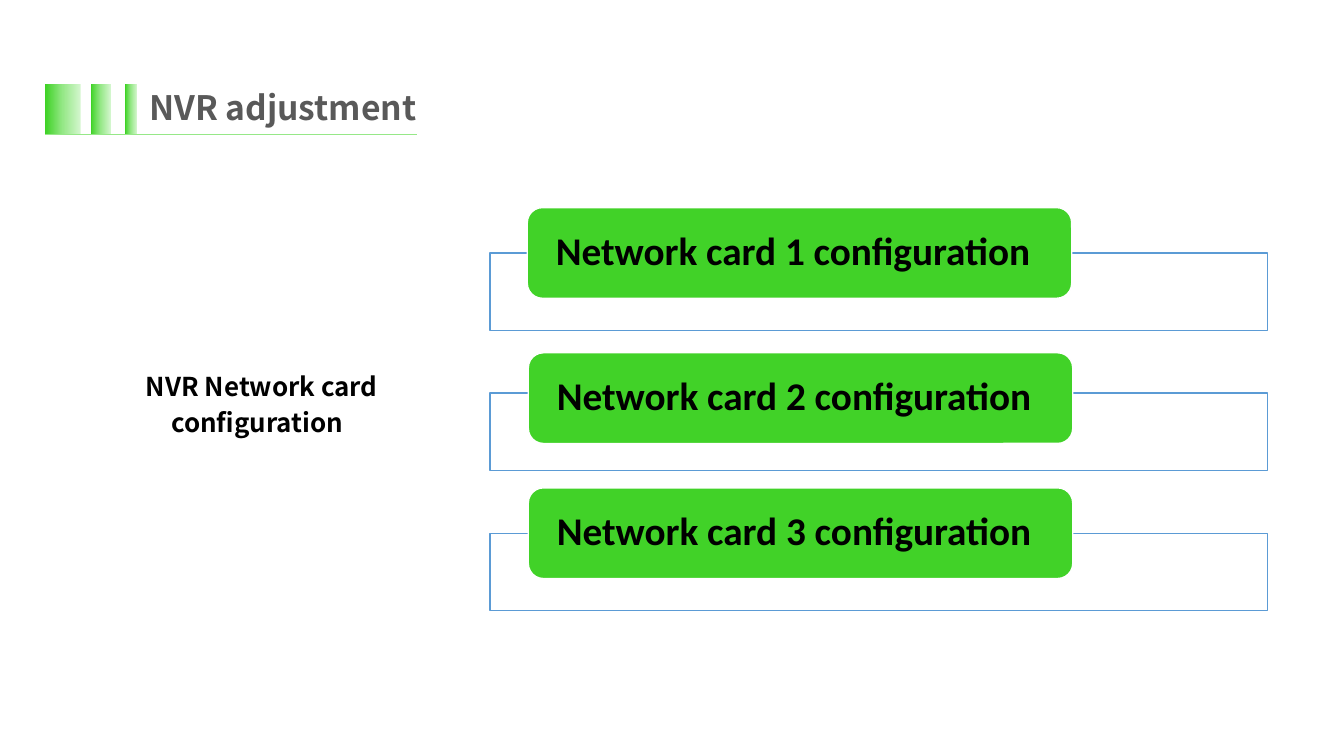
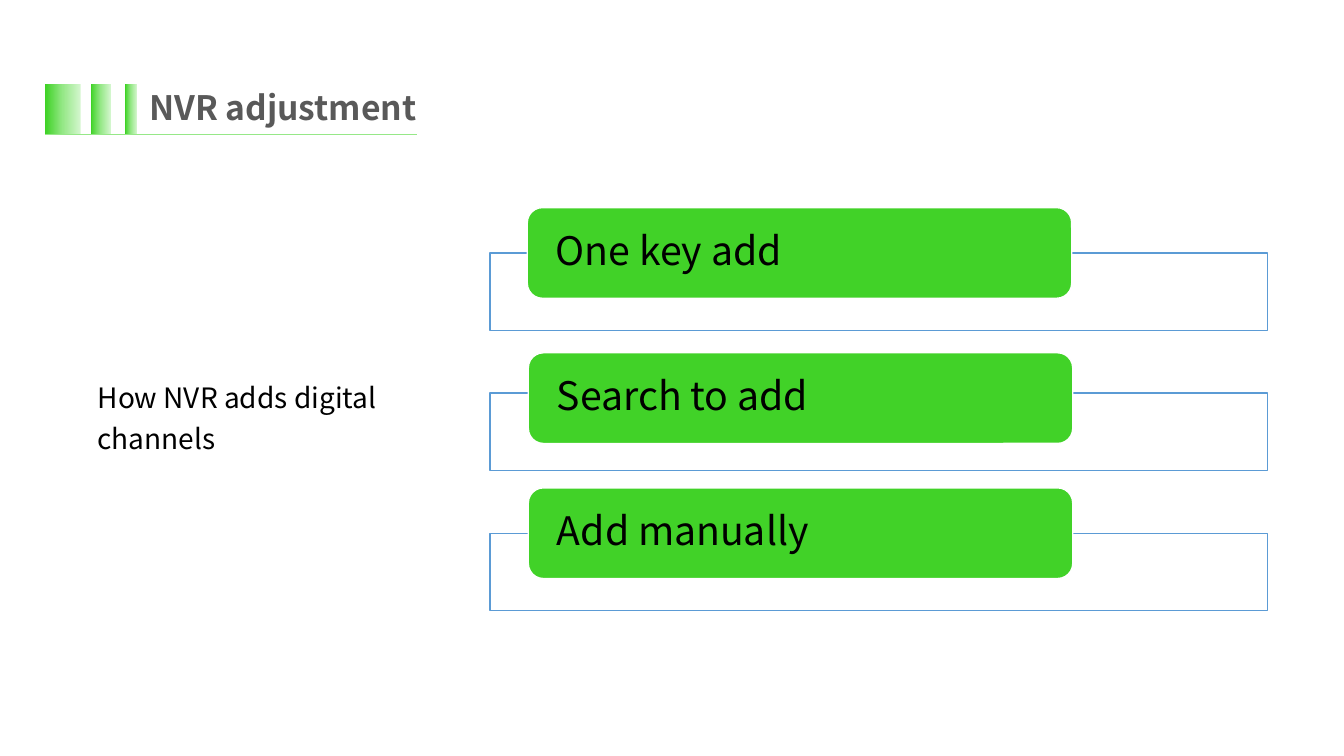
"""Build two NVR adjustment slides."""
from copy import deepcopy
from dataclasses import dataclass

from lxml import etree
from pptx import Presentation
from pptx.dml.color import RGBColor
from pptx.enum import shapes, text
from pptx.oxml import ns
from pptx.util import Inches, Pt


@dataclass(frozen=True)
class Theme:
    """Hold the colours, fonts and type sizes."""
    fade: tuple = ("D4F6CE", "96E888", "3ED225")
    rule: str = "96E888"
    green: str = "41D228"
    blue: str = "5B9BD5"
    white: str = "FFFFFF"
    black: str = "000000"
    grey: str = "595959"
    sans: str = "Noto Sans CJK SC"
    body: str = "Calibri"
    head: float = 24
    item: float = 28


T = Theme()


def write(shape, words, *, size, font=T.sans, color=T.black, bold=False,
          inset=(0.1, 0.05), anchor=text.MSO_ANCHOR.TOP, space=1.0, hang=0):
    """Set a shape's text and its format."""
    frame = shape.text_frame
    frame.word_wrap = True
    frame.vertical_anchor = anchor
    frame.margin_left = frame.margin_right = Inches(inset[0])
    frame.margin_top = frame.margin_bottom = Inches(inset[1])
    para = frame.paragraphs[0]
    para.alignment = text.PP_ALIGN.LEFT
    para.line_spacing = space
    if hang:
        props = para._p.get_or_add_pPr()
        props.set("marL", str(Inches(hang)))
        props.set("indent", str(-Inches(hang)))
    run = para.add_run()
    run.text = words
    run.font.name = font
    run.font.size = Pt(size)
    run.font.bold = bold
    run.font.color.rgb = RGBColor.from_string(color)


def label(slide, box, words, **style):
    """Add a text box."""
    shape = slide.shapes.add_textbox(*map(Inches, box))
    write(shape, words, **style)
    return shape


def block(slide, kind, box, fill=None, line=None):
    """Add a preset shape without a shadow."""
    shape = slide.shapes.add_shape(kind, *map(Inches, box))
    shape.shadow.inherit = False
    if fill:
        shape.fill.solid()
        shape.fill.fore_color.rgb = RGBColor.from_string(fill)
    if line:
        shape.line.color.rgb = RGBColor.from_string(line)
        shape.line.width = Pt(1)
    else:
        shape.line.fill.background()
    return shape


def blend(shape):
    """Fill a shape with the three-stop fade."""
    shape.fill.gradient()
    shape.fill.gradient_angle = 180
    stops = shape._element.spPr.find(".//" + ns.qn("a:gsLst"))
    stops.append(deepcopy(stops[-1]))
    for i, stop in enumerate(shape.fill.gradient_stops):
        stop.position = i / 2
        stop.color.rgb = RGBColor.from_string(T.fade[i])


def header(slide, box, words):
    """Draw the fading bars, the rule and the title."""
    left, top, width, height = box
    for shift, wide in ((0, 0.35), (0.45, 0.2), (0.79, 0.12)):
        blend(block(slide, shapes.MSO_SHAPE.RECTANGLE,
                    (left + shift, top, wide, height)))
    base = Inches(top + height)
    rule = slide.shapes.add_connector(
        shapes.MSO_CONNECTOR.STRAIGHT,
        Inches(left), base, Inches(left + width), base)
    rule.line.color.rgb = RGBColor.from_string(T.rule)
    rule.line.width = Pt(0.25)
    etree.SubElement(rule._element.spPr, ns.qn("a:effectLst"))
    title = label(slide, (left + 0.9, top - 0.03, 3.66, 0.53), words,
                  size=T.head, color=T.grey, bold=True, inset=(0.13, 0.06))
    title.text_frame.auto_size = text.MSO_AUTO_SIZE.SHAPE_TO_FIT_TEXT


def stack(slide, box, items, **style):
    """Draw a column of framed rows, each with a green tab."""
    left, top, width, height = box
    pitch = 1.39
    shifts = ((0.37, 0.45), (0.38, 0.4), (0.38, 0.45))
    for i, (words, (right, up)) in enumerate(zip(items, shifts)):
        y = top + i * pitch
        frame = block(slide, shapes.MSO_SHAPE.RECTANGLE,
                      (left, y, width, height), T.white, T.blue)
        tint = frame._element.spPr.find(ns.qn("a:solidFill"))[0]
        etree.SubElement(tint, ns.qn("a:alpha"), val="90000")
        tab = block(slide, shapes.MSO_SHAPE.ROUNDED_RECTANGLE,
                    (left + right, y - up, 5.4, 0.9), T.green, T.white)
        write(tab, words, size=T.item, inset=(0.24, 0),
              anchor=text.MSO_ANCHOR.MIDDLE, space=0.9, **style)


def page(deck, box, topic, items, note, style):
    """Add a slide with a topic on the left and its items on the right."""
    slide = deck.slides.add_slide(deck.slide_layouts[6])
    header(slide, (0.45, 0.83, 3.69, 0.5), "NVR adjustment")
    label(slide, box, topic, **note)
    stack(slide, (4.86, 2.51, 7.71, 0.77), items, **style)


def main():
    """Build and save the deck."""
    deck = Presentation()
    deck.slide_width, deck.slide_height = Inches(13.33), Inches(7.5)
    page(deck, (1.35, 3.58, 3.07, 1.02), "NVR Network card configuration",
         [f"Network card {n} configuration" for n in (1, 2, 3)],
         dict(size=18.5, bold=True, space=1.15, hang=0.25),
         dict(font=T.body, bold=True))
    page(deck, (0.87, 3.65, 3.9, 1.1), "How NVR adds digital channels",
         ("One key add", "Search to add", "Add manually"),
         dict(size=20, space=1.23), {})
    deck.save("out.pptx")


if __name__ == "__main__":
    main()
